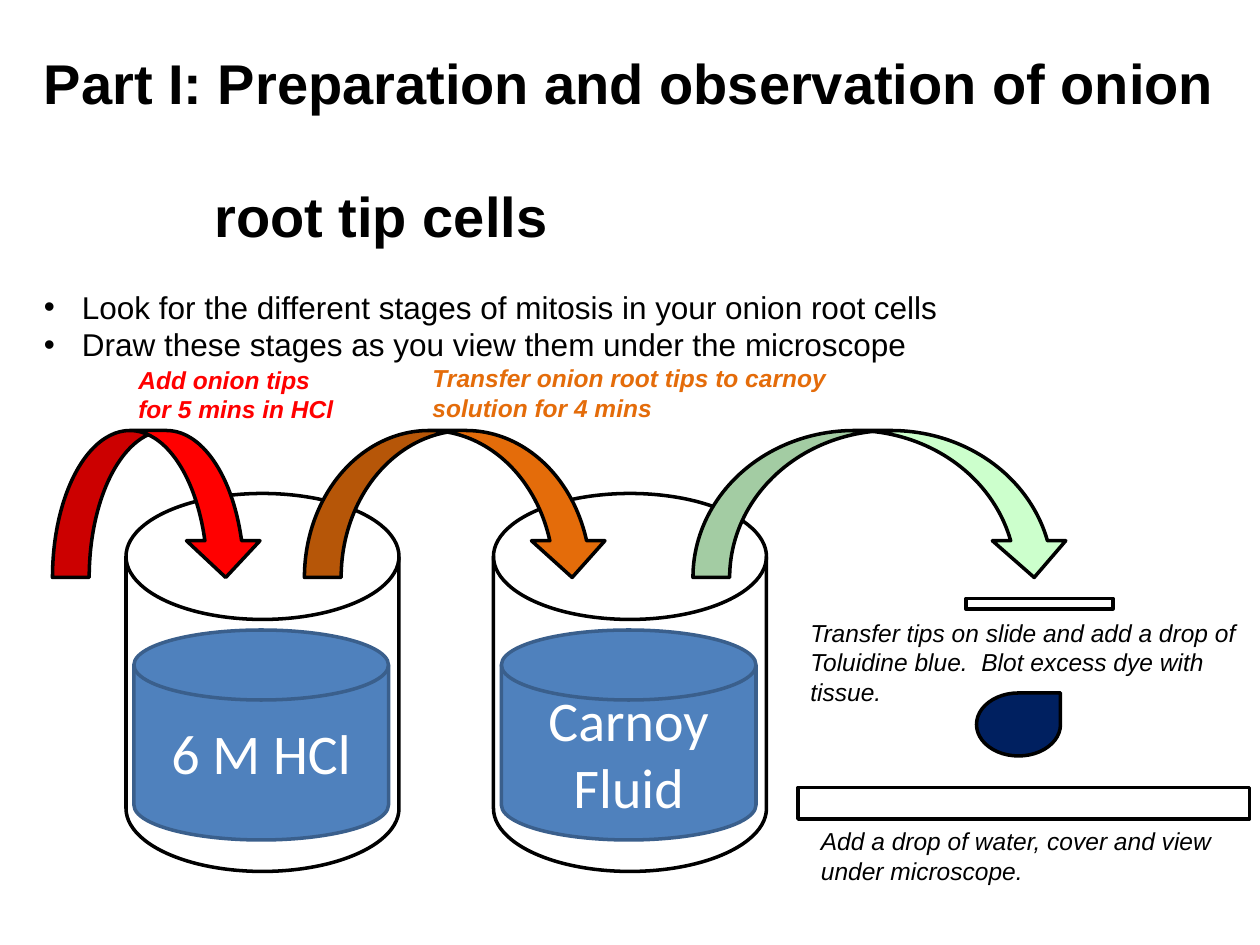
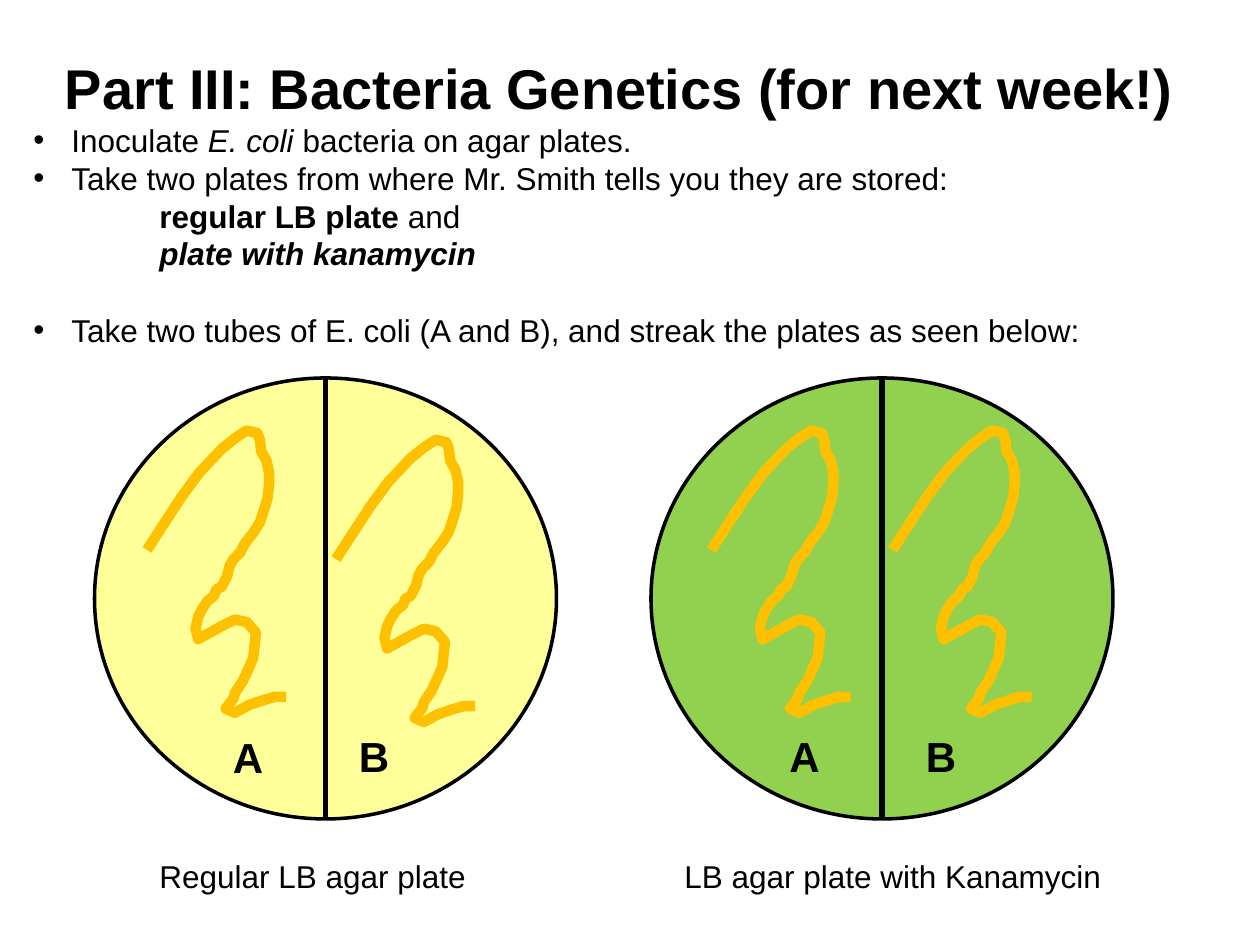
from lxml import etree
from pptx import Presentation
from pptx.dml.color import RGBColor
from pptx.enum.shapes import MSO_CONNECTOR, MSO_SHAPE
from pptx.enum.text import MSO_ANCHOR, MSO_AUTO_SIZE, PP_ALIGN
from pptx.oxml.ns import qn
from pptx.util import Pt

PX = 9525  # EMU in one px, 96 px to the inch
DISK = MSO_SHAPE.FLOWCHART_MAGNETIC_DISK
ARROW = MSO_SHAPE.CURVED_DOWN_ARROW
DISH = MSO_SHAPE.FLOWCHART_CONNECTOR
DROP = MSO_SHAPE.TEAR
RECT = MSO_SHAPE.RECTANGLE
LINE = MSO_CONNECTOR.STRAIGHT
CENTER = PP_ALIGN.CENTER
MIDDLE = MSO_ANCHOR.MIDDLE
GROW = MSO_AUTO_SIZE.SHAPE_TO_FIT_TEXT


class Theme:
    font, alt = "Arial", "Calibri"
    title, mark, body, small = 32, 24, 18, 14
    edge, thick, streak = 2, 3, 6
    black, white = "000000", "FFFFFF"
    red, orange, mint = "FF0000", "E46C0A", "CCFFCC"
    blue, slate, navy = "4F81BD", "3A5F8C", "002060"
    cream, green, gold = "FFFF99", "92D050", "FFC000"


def draw(slide, kind, box, fill, edge=Theme.black):
    shape = slide.shapes.add_shape(kind, *[n * PX for n in box])
    shape.shadow.inherit = False
    shape.fill.solid()
    shape.fill.fore_color.rgb = RGBColor.from_string(fill)
    shape.line.color.rgb = RGBColor.from_string(edge)
    shape.line.width = Pt(Theme.edge)
    return shape


def note(slide, box, rows, size, color=Theme.black):
    """Each row is a list of (text, marks); marks may hold b, i and T for title."""
    frame = slide.shapes.add_textbox(*[n * PX for n in box]).text_frame
    frame.word_wrap = True
    frame.auto_size = GROW
    for i, row in enumerate(rows):
        para = frame.add_paragraph() if i else frame.paragraphs[0]
        for words, marks in row:
            run = para.add_run()
            run.text = words
            font = run.font
            font.name = Theme.font
            font.size = Pt(Theme.title if "T" in marks else size)
            font.bold = "b" in marks
            font.italic = "i" in marks
            font.color.rgb = RGBColor.from_string(color)
    return frame


deck = Presentation()
deck.slide_width, deck.slide_height = 960 * PX, 720 * PX
blank = deck.slide_layouts[6]
prep, plates = [deck.slides.add_slide(blank) for _ in range(2)]

# Onion slide: title and tasks
intro = note(prep, (24, 32, 912, 204), [
    [("Part I: Preparation and observation of onion", "bT")],
    [("root tip cells", "bT")],
    [("Look for the different stages of mitosis in your onion root cells", "")],
    [("Draw these stages as you view them under the microscope", "")],
], Theme.body)
head, tail, look, sketch = intro.paragraphs
head.space_after = Pt(38)
tail._p.get_or_add_pPr().set("marL", str(130 * PX))
look.space_before = Pt(22)

# Jars with their fluids
for left, name in ((96, "6 M HCl"), (376, "Carnoy Fluid")):
    draw(prep, DISK, (left, 376, 208, 288), Theme.white)
    fluid = draw(prep, DISK, (left + 6, 480, 194, 160), Theme.blue, Theme.slate)
    frame = fluid.text_frame
    frame.text = name
    frame.word_wrap = True
    frame.vertical_anchor = MIDDLE
    para = frame.paragraphs[0]
    para.alignment = CENTER
    font = para.runs[0].font
    font.name, font.size = Theme.alt, Pt(Theme.title)
    font.color.rgb = RGBColor.from_string(Theme.white)

# Glass slide and cover slip
draw(prep, RECT, (608, 600, 344, 24), Theme.white)
draw(prep, RECT, (736, 456, 112, 8), Theme.white)

# Transfer arrows
for left, width, fill in ((40, 160, Theme.red), (232, 232, Theme.orange),
                          (528, 288, Theme.mint)):
    draw(prep, ARROW, (left, 328, width, 112), fill)

# Step notes and the dye drop
steps = (
    ((96, 273, 200, 55), ("Add onion tips", "for 5 mins in HCl"), "bi", Theme.red),
    ((320, 272, 352, 55), ("Transfer onion root tips to carnoy solution for 4 mins",),
     "bi", Theme.orange),
    ((608, 466, 352, 78), ("Transfer tips on slide and add a drop of Toluidine blue.  "
                           "Blot excess dye with tissue.",), "i", Theme.black),
    ((616, 625, 352, 55), ("Add a drop of water, cover and view under microscope.",),
     "i", Theme.black),
)
for box, rows, marks, color in steps:
    note(prep, box, [[(row, marks)] for row in rows], Theme.small, color)
draw(prep, DROP, (744, 528, 64, 48), Theme.navy)

# Bacteria slide: title and tasks
guide = note(plates, (16, 8, 912, 294), [
    [("Part III: Bacteria Genetics (for next week!)", "bT")],
    [("Inoculate ", ""), ("E. coli ", "i"), ("bacteria on agar plates.", "")],
    [("Take two plates from where Mr. Smith tells you they are stored:", "")],
    [("regular LB plate ", "b"), ("and", "")],
    [("plate with kanamycin", "bi")],
    [("Take two tubes of E. coli (A and B), and streak the plates as seen below:", "")],
], Theme.body)
guide.margin_top = 33 * PX
head, grow, take, plain, drug, tubes = guide.paragraphs
head.alignment = CENTER
for para in (plain, drug):
    para._p.get_or_add_pPr().set("marL", str(96 * PX))
tubes.space_before = Pt(22)

# Bullets on both slides
for para in (look, sketch, grow, take, tubes):
    props = para._p.get_or_add_pPr()
    props.set("marL", str(29 * PX))
    props.set("indent", str(-29 * PX))
    etree.SubElement(props, qn("a:buFont")).set("typeface", Theme.font)
    etree.SubElement(props, qn("a:buChar")).set("char", "•")

# Agar plates, each split in two
for left, fill in ((72, Theme.cream), (496, Theme.green)):
    draw(plates, DISH, (left, 288, 352, 336), fill)
    mid = (left + 176) * PX
    split = plates.shapes.add_connector(LINE, mid, 288 * PX, mid, 624 * PX)
    split.line.color.rgb = RGBColor.from_string(Theme.black)
    split.line.width = Pt(Theme.thick)
    etree.SubElement(split._element.spPr, qn("a:effectLst"))

# Plate names and half marks
for left, width, name in ((112, 320, "Regular LB agar plate"),
                          (512, 376, "LB agar plate with Kanamycin")):
    note(plates, (left, 648, width, 38), [[(name, "")]], Theme.body)
for left, top, mark in ((168, 553, "A"), (264, 552, "B"),
                        (592, 552, "A"), (696, 552, "B")):
    note(plates, (left, top, 72, 48), [[(mark, "b")]], Theme.mark)

# Streaks: one outline set down four times
trace = (
    (0, 91), (13, 71), (26, 51), (40, 32), (57, 14), (67, 6), (76, 0), (84, 2),
    (86, 7), (87, 16), (91, 23), (93, 32), (93, 41), (92, 51), (89, 61), (86, 70),
    (81, 78), (77, 83), (74, 87), (71, 93), (66, 98), (63, 103), (61, 111),
    (57, 119), (53, 121), (51, 126), (46, 130), (42, 136), (39, 142), (37, 151),
    (39, 159), (48, 154), (57, 149), (67, 144), (76, 146), (83, 154), (82, 164),
    (81, 173), (78, 180), (73, 191), (67, 200), (66, 204), (60, 212), (67, 215),
    (78, 209), (87, 206), (97, 203), (106, 203),
)
for left, top in ((112, 328), (256, 335), (542, 328), (680, 328)):
    pen = plates.shapes.build_freeform(*trace[0], scale=PX)
    pen.add_line_segments(trace[1:], close=False)
    streak = pen.convert_to_shape(left * PX, top * PX)
    streak.shadow.inherit = False
    streak.fill.background()
    streak.line.color.rgb = RGBColor.from_string(Theme.gold)
    streak.line.width = Pt(Theme.streak)

deck.save("out.pptx")
